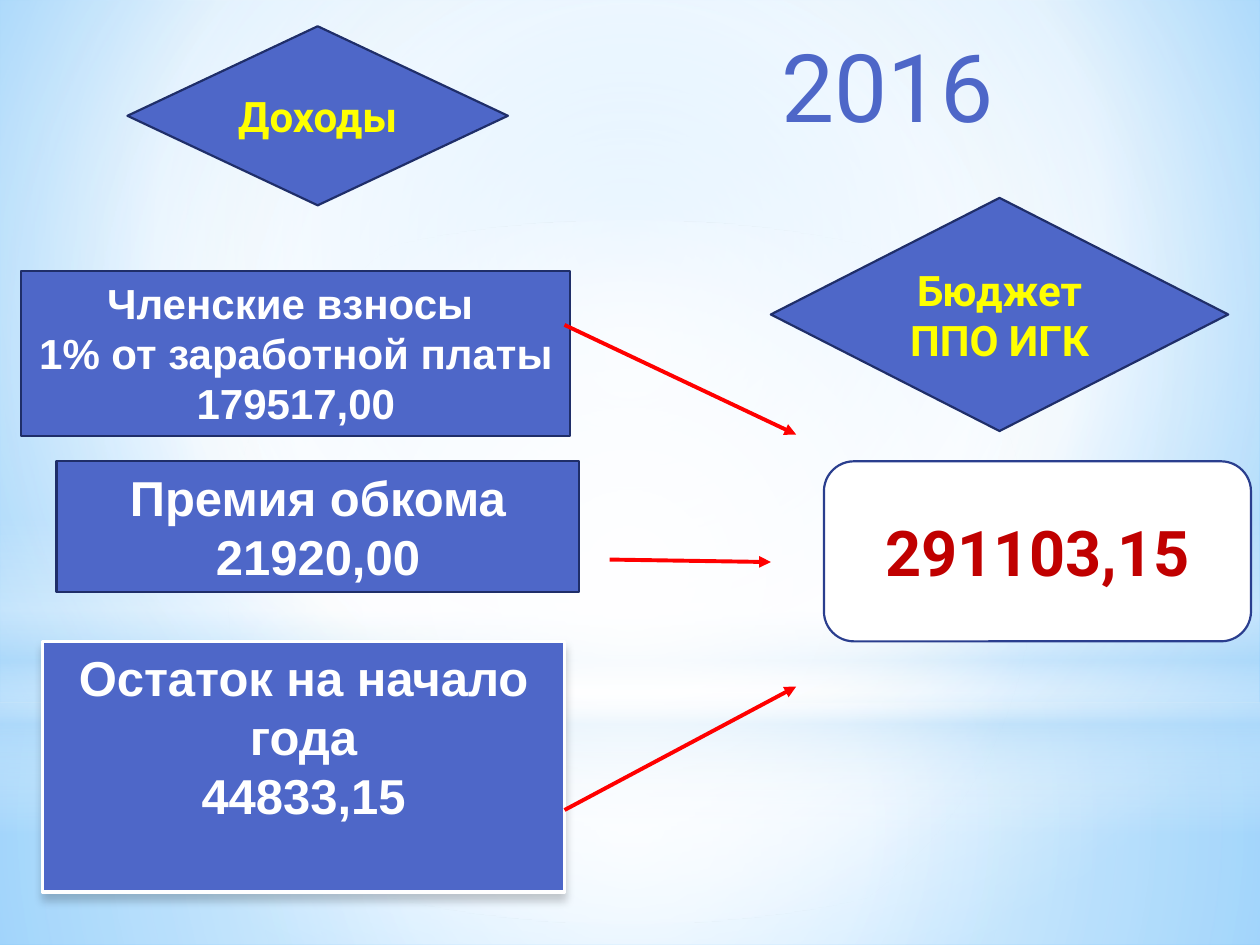
import pptx
import pptx.dml.color
import pptx.enum.shapes
import pptx.enum.text
import pptx.oxml.ns
import pptx.util
from lxml import etree

Cm, Pt, qn = pptx.util.Cm, pptx.util.Pt, pptx.oxml.ns.qn
SHAPE = pptx.enum.shapes.MSO_SHAPE
ANCHOR = pptx.enum.text.MSO_ANCHOR
BLUE, NAVY, WHITE, YELLOW, SKY = "4E67C8", "1F2E69", "FFFFFF", "FFFF00", "B4DCFA"


def color(hex_code):
    return pptx.dml.color.RGBColor.from_string(hex_code)


def add_color_element(parent, hex_code, opacity):
    element = etree.SubElement(parent, qn("a:srgbClr"), val=hex_code)
    if opacity < 100:
        etree.SubElement(element, qn("a:alpha"), val=str(opacity * 1000))


def set_gradient(fill, owner, stops, focus=None):
    """Stops are (percent, colour, opacity); without a focus the gradient runs downwards."""
    fill.gradient()
    gradient = next(owner.iter(qn("a:gradFill")))
    gradient.clear()
    gradient.set("rotWithShape", "1")
    stop_list = etree.SubElement(gradient, qn("a:gsLst"))
    for position, hex_code, opacity in stops:
        stop = etree.SubElement(stop_list, qn("a:gs"), pos=str(position * 1000))
        add_color_element(stop, hex_code, opacity)
    if focus:
        circle = etree.SubElement(gradient, qn("a:path"), path="circle")
        sides = {side: str(value * 1000) for side, value in zip("ltrb", focus)}
        etree.SubElement(circle, qn("a:fillToRect"), sides)
    else:
        etree.SubElement(gradient, qn("a:lin"), ang="5400000", scaled="0")


def write_text(shape, lines, size, font_name, hex_code, bold=True, anchor=ANCHOR.MIDDLE):
    frame = shape.text_frame
    frame.word_wrap = True
    frame.auto_size = pptx.enum.text.MSO_AUTO_SIZE.NONE
    frame.vertical_anchor = anchor
    frame.text = "\n".join(lines)
    for paragraph in frame.paragraphs:
        paragraph.alignment = pptx.enum.text.PP_ALIGN.CENTER
        paragraph.line_spacing = 1.0
        paragraph.space_before = Pt(0)
        paragraph.font.size = Pt(size)
        paragraph.font.name = font_name
        paragraph.font.bold = bold
        paragraph.font.color.rgb = color(hex_code)


def add_box(slide, kind, box, fill=BLUE, line=NAVY, width=1.25):
    shape = slide.shapes.add_shape(kind, *map(Cm, box))
    shape.shadow.inherit = False
    shape.fill.solid()
    shape.fill.fore_color.rgb = color(fill)
    shape.line.color.rgb = color(line)
    shape.line.width = Pt(width)
    return shape


def add_drop_shadow(shape):
    effects = shape._element.spPr.find(qn("a:effectLst"))
    shadow = etree.SubElement(effects, qn("a:outerShdw"), blurRad=str(Pt(5)),
                              dist=str(Pt(4)), dir="5400000", rotWithShape="0")
    add_color_element(shadow, "000000", 20)


def add_backdrop(slide, box):
    left, top, width, height = box
    set_gradient(slide.background.fill, slide._element,
                 [(0, "9ED5FF", 100), (60, WHITE, 100), (100, "5BB9FF", 100)],
                 (20, 10, 20, 60))
    center = (50, 50, 50, 50)
    horizon = 14.17
    panels = [
        (SHAPE.RECTANGLE, horizon, height - horizon,
         [(0, WHITE, 91), (37, WHITE, 76), (100, SKY, 79)], center),
        (SHAPE.RECTANGLE, 0, horizon,
         [(0, WHITE, 89), (48, WHITE, 62), (100, SKY, 79)], center),
        (SHAPE.RECTANGLE, 10.46, 6.35,
         [(0, WHITE, 0), (29, WHITE, 30), (45, SKY, 40), (55, WHITE, 26),
          (65, SKY, 60), (100, WHITE, 0)], None),
        (SHAPE.OVAL, 4.45, horizon, [(0, WHITE, 100), (56, WHITE, 0)], center),
    ]
    for kind, offset, panel_height, stops, focus in panels:
        panel = add_box(slide, kind, (left, top + offset, width, panel_height))
        panel.line.fill.background()
        set_gradient(panel.fill, panel._element, stops, focus)


def add_title(slide, box):
    title = slide.shapes.title
    title.left, title.top, title.width, title.height = map(Cm, box)
    write_text(title, ["2016"], 54, "Roboto", BLUE, bold=False, anchor=ANCHOR.TOP)
    # Bring the title in front of the backdrop panels
    slide.shapes._spTree.append(title._element)


def add_income(slide, box):
    left, top, width, height = box
    # Heading
    heading = add_box(slide, SHAPE.FLOWCHART_DECISION, (left + 2.14, top, 7.67, 3.61))
    write_text(heading, ["Доходы"], 24, "Roboto", YELLOW)
    # Sources of income: offset x, offset y, width, height, size, lines
    sources = [
        (0, 4.93, 11.07, 3.33, 24,
         ["Членские взносы ", "1% от заработной платы", "179517,00"]),
        (0.71, 8.77, 10.54, 2.64, 28, ["Премия обкома", "21920,00"]),
        (0.43, 12.4, 10.52, 5.05, 28, ["Остаток на начало года", "44833,15"]),
    ]
    for x, y, source_width, source_height, size, lines in sources:
        source = add_box(slide, SHAPE.RECTANGLE,
                         (left + x, top + y, source_width, source_height))
        write_text(source, lines, size, "Arial", WHITE, anchor=ANCHOR.TOP)
    # The opening balance stands out with a white frame
    source.line.color.rgb = color(WHITE)
    source.line.width = Pt(2)
    add_drop_shadow(source)


def add_budget(slide, box):
    left, top, width, height = box
    heading = add_box(slide, SHAPE.FLOWCHART_DECISION, (left, top, 9.22, 4.7))
    write_text(heading, ["Бюджет ППО ИГК"], 24, "Roboto", YELLOW)
    total = add_box(slide, SHAPE.ROUNDED_RECTANGLE,
                    (left + 1.07, top + 5.31, 8.61, 3.63), WHITE, "2A3E8E")
    write_text(total, ["291103,15"], 36, "Roboto", "C00000")


def add_arrows(slide, box):
    left, top, width, height = box
    arrows = [
        (0, 0, width, 2.21),
        (0.91, 4.73, 4.16, 4.78),
        (0, height, width, 7.29),
    ]
    for x1, y1, x2, y2 in arrows:
        points = (left + x1, top + y1, left + x2, top + y2)
        arrow = slide.shapes.add_connector(
            pptx.enum.shapes.MSO_CONNECTOR.STRAIGHT, *map(Cm, points))
        arrow.line.color.rgb = color("FF0000")
        arrow.line.width = Pt(2.25)
        properties = arrow._element.spPr
        etree.SubElement(properties.find(qn("a:ln")), qn("a:tailEnd"), type="triangle")
        etree.SubElement(properties, qn("a:effectLst"))


def main():
    presentation = pptx.Presentation()
    presentation.slide_width, presentation.slide_height = Cm(25.4), Cm(19.05)
    slide = presentation.slides.add_slide(presentation.slide_layouts[5])
    add_backdrop(slide, (0, 0, 25.4, 19.05))
    add_title(slide, (13.89, 0.43, 8, 2.57))
    add_income(slide, (0.43, 0.53, 11.25, 17.45))
    add_budget(slide, (15.54, 3.99, 9.68, 8.94))
    add_arrows(slide, (11.38, 6.55, 4.67, 9.78))
    presentation.save("out.pptx")


if __name__ == "__main__":
    main()
